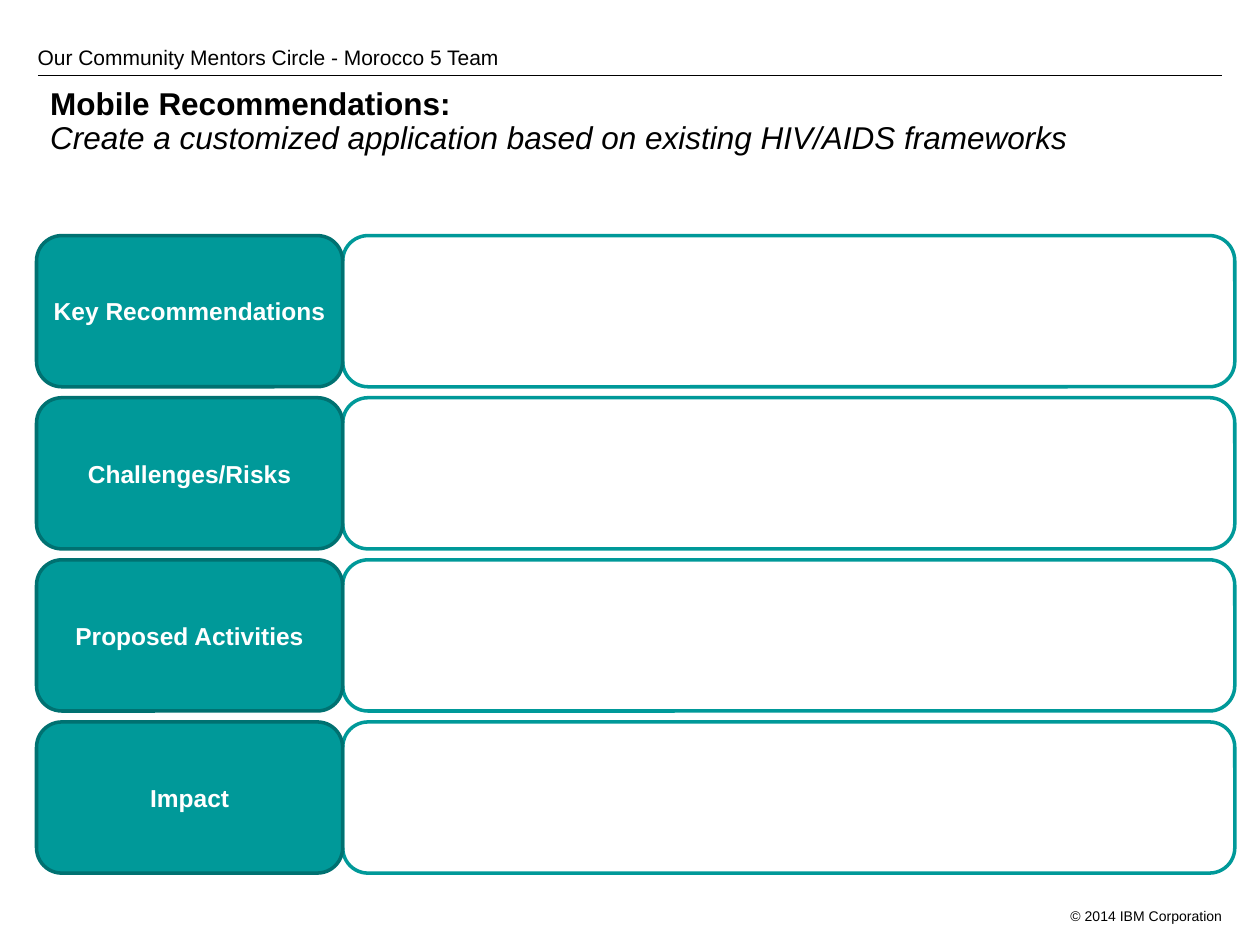
import pptx
import pptx.util
import pptx.dml.color
import pptx.enum.shapes
import pptx.enum.text
from lxml import etree
from pptx.util import Inches, Pt

RGB = pptx.dml.color.RGBColor.from_string
ALIGN = pptx.enum.text.PP_ALIGN
ANCHOR = pptx.enum.text.MSO_ANCHOR
ROUND = pptx.enum.shapes.MSO_SHAPE.ROUNDED_RECTANGLE
LINE = pptx.enum.shapes.MSO_CONNECTOR.STRAIGHT


class Theme:
    font = "Arial"
    ink, paper = RGB("000000"), RGB("FFFFFF")
    teal, edge = RGB("009999"), RGB("007171")
    title, label, head, foot = Pt(18), Pt(14), Pt(12), Pt(8)
    rule, border = Pt(0.75), Pt(2)


def style(para, size, color=Theme.ink, bold=False, italic=False):
    font = para.font
    font.name, font.size = Theme.font, size
    font.bold, font.italic = bold, italic
    font.color.rgb = color


def add_box(slide, box, pad=0.05):
    frame = slide.shapes.add_textbox(*map(Inches, box)).text_frame
    frame.word_wrap = True
    frame.margin_top = frame.margin_bottom = Inches(pad)
    return frame


def add_head(slide, box):
    """Team name above a thin rule."""
    left, top, width, height = box
    frame = add_box(slide, (left - 0.1, top, width, height - 0.05), 0)
    frame.vertical_anchor = ANCHOR.BOTTOM
    para = frame.paragraphs[0]
    para.text = "Our Community Mentors Circle - Morocco 5 Team"
    para.space_after = Pt(9)
    style(para, Theme.head)

    base = Inches(top + height)
    rule = slide.shapes.add_connector(
        LINE, Inches(left), base, Inches(left + width), base)
    rule.line.color.rgb = Theme.ink
    rule.line.width = Theme.rule
    etree.SubElement(rule.element.spPr, pptx.oxml.ns.qn("a:effectLst"))


def add_title(slide, box):
    """Bold topic with an italic line below it."""
    frame = add_box(slide, box)
    lines = ("Mobile Recommendations:",
             "Create a customized application based on existing HIV/AIDS frameworks")
    frame.text = "\n".join(lines)
    for i, para in enumerate(frame.paragraphs):
        para.line_spacing = 0.9
        style(para, Theme.title, bold=i == 0, italic=i == 1)


def add_card(slide, box, fill, edge):
    card = slide.shapes.add_shape(ROUND, *map(Inches, box))
    card.shadow.inherit = False
    card.adjustments[0] = 0.167
    card.fill.solid()
    card.fill.fore_color.rgb = fill
    card.line.color.rgb = edge
    card.line.width = Theme.border
    return card


def add_rows(slide, box, names, split=2.43, tall=1.2):
    """Label cards, each beside an empty panel, spread evenly down the box."""
    left, top, width, height = box
    step = (height - tall) / (len(names) - 1)
    for i, name in enumerate(names):
        y = top + i * step
        add_card(slide, (left + split, y, width - split, tall),
                 Theme.paper, Theme.teal)
        card = add_card(slide, (left, y, split, tall), Theme.teal, Theme.edge)
        frame = card.text_frame
        frame.word_wrap = False
        frame.vertical_anchor = ANCHOR.MIDDLE
        para = frame.paragraphs[0]
        para.text = name
        para.alignment = ALIGN.CENTER
        style(para, Theme.label, Theme.paper, bold=True)


def add_foot(slide, box):
    """Copyright line at the lower right."""
    para = add_box(slide, box).paragraphs[0]
    para.text = "© 2014 IBM Corporation"
    para.alignment = ALIGN.RIGHT
    style(para, Theme.foot)


def main():
    deck = pptx.Presentation()
    deck.slide_width, deck.slide_height = Inches(10), Inches(7.5)
    slide = deck.slides.add_slide(deck.slide_layouts[6])
    add_head(slide, (0.3, 0.15, 9.4, 0.45))
    add_title(slide, (0.3, 0.65, 8.36, 1.07))
    add_rows(slide, (0.29, 1.87, 9.51, 5.06),
             ("Key Recommendations", "Challenges/Risks",
              "Proposed Activities", "Impact"))
    add_foot(slide, (8.3, 7.15, 1.5, 0.2))
    deck.save("out.pptx")


if __name__ == "__main__":
    main()
